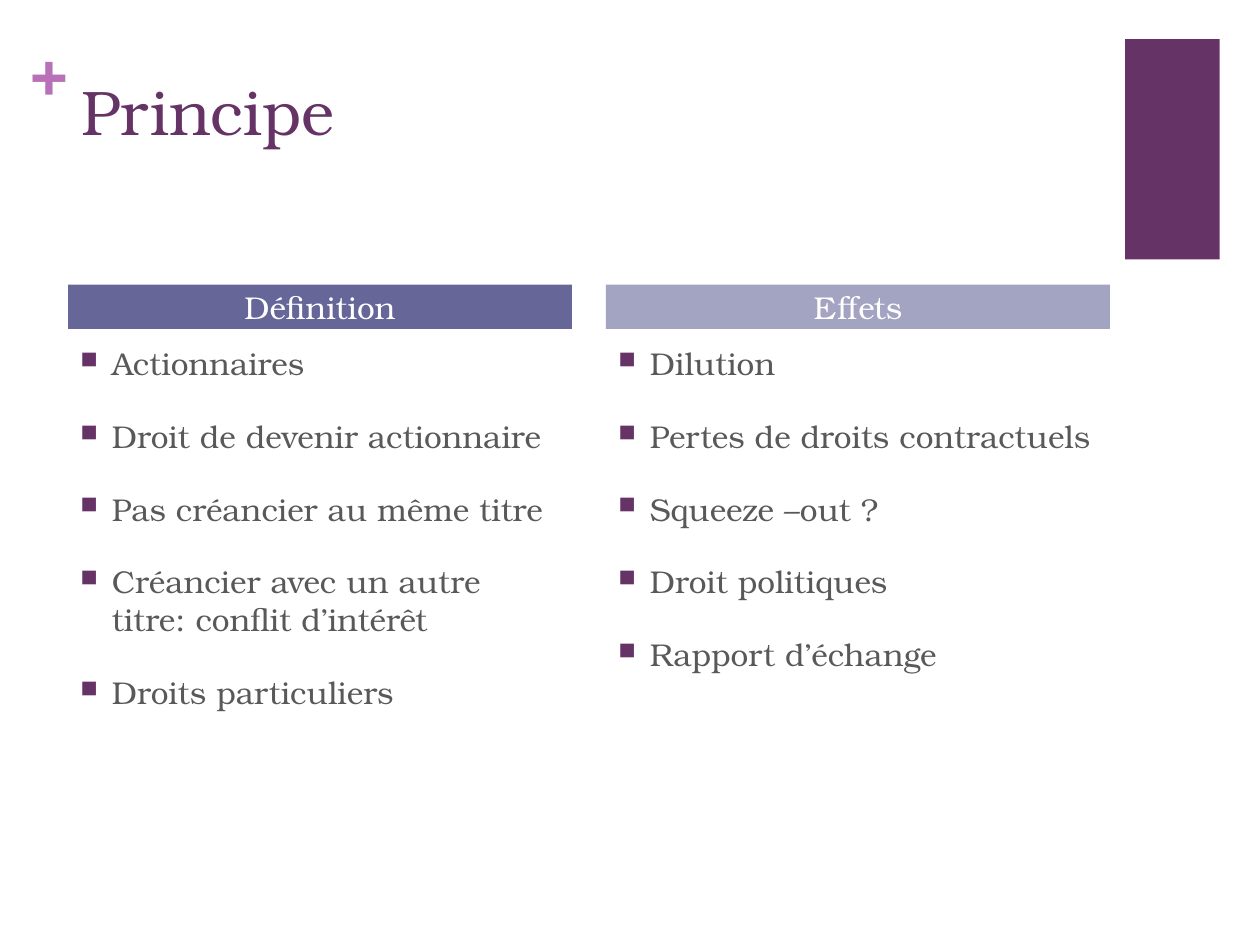
from dataclasses import dataclass

from lxml import etree
from pptx import Presentation
from pptx.dml.color import RGBColor
from pptx.enum.shapes import MSO_SHAPE
from pptx.enum.text import MSO_ANCHOR, PP_ALIGN
from pptx.oxml.ns import qn
from pptx.util import Inches, Pt

RECTANGLE = MSO_SHAPE.RECTANGLE
TOP, MIDDLE = MSO_ANCHOR.TOP, MSO_ANCHOR.MIDDLE
LEFT, CENTER = PP_ALIGN.LEFT, PP_ALIGN.CENTER


@dataclass(frozen=True)
class Theme:
    font: str = "TeX Gyre Bonum"
    plum: str = "663366"
    orchid: str = "B870B8"
    indigo: str = "666699"
    lavender: str = "A3A3C2"
    gray: str = "595959"
    white: str = "FFFFFF"
    title_size: int = 36
    body_size: int = 18
    gap: int = 20
    bullet_percent: int = 75


THEME = Theme()

COLUMNS = [
    ("Définition", THEME.indigo, [
        "Actionnaires",
        "Droit de devenir actionnaire",
        "Pas créancier au même titre",
        "Créancier avec un autre titre: conflit d’intérêt",
        "Droits particuliers",
    ]),
    ("Effets", THEME.lavender, [
        "Dilution",
        "Pertes de droits contractuels",
        "Squeeze –out ?",
        "Droit politiques",
        "Rapport d’échange",
    ]),
]


def apply_format(target, values):
    for name, value in values.items():
        setattr(target, name, value)


def add_block(slide, box, color):
    block = slide.shapes.add_shape(RECTANGLE, *map(Inches, box))
    block.shadow.inherit = False
    block.fill.solid()
    block.fill.fore_color.rgb = RGBColor.from_string(color)
    block.line.fill.background()
    return block


def add_text_area(slide, box):
    return slide.shapes.add_textbox(*map(Inches, box)).text_frame


def write_lines(frame, lines, size, color, bold=False, anchor=TOP, align=LEFT, gap=0, inset=None):
    apply_format(frame, {"word_wrap": True, "vertical_anchor": anchor})
    if inset is not None:
        side, edge = map(Inches, inset)
        apply_format(frame, {"margin_left": side, "margin_right": side,
                             "margin_top": edge, "margin_bottom": edge})
    for index, line in enumerate(lines):
        paragraph = frame.paragraphs[0] if index == 0 else frame.add_paragraph()
        apply_format(paragraph, {"alignment": align, "space_before": Pt(gap)})
        run = paragraph.add_run()
        run.text = line
        apply_format(run.font, {"name": THEME.font, "size": Pt(size), "bold": bold})
        run.font.color.rgb = RGBColor.from_string(color)


def add_bullet(paragraph, color):
    properties = paragraph._p.get_or_add_pPr()
    indent = Inches(0.25)
    properties.set("marL", str(indent))
    properties.set("indent", str(-indent))
    bullet_color = etree.SubElement(properties, qn("a:buClr"))
    etree.SubElement(bullet_color, qn("a:srgbClr"), val=color)
    etree.SubElement(properties, qn("a:buSzPct"), val=str(THEME.bullet_percent * 1000))
    etree.SubElement(properties, qn("a:buChar"), char="■")


def add_header(slide, left, top, width, height):
    block_width = 0.75
    add_block(slide, (left + width - block_width, top + 0.06, block_width, 1.75), THEME.plum)
    plus = add_text_area(slide, (left, top, 0.28, 0.61))
    write_lines(plus, ["+"], THEME.title_size, THEME.orchid, bold=True, inset=(0, 0))
    title = add_text_area(slide, (left + 0.31, top + 0.28, 8.26, 1.22))
    write_lines(title, ["Principe"], THEME.title_size, THEME.plum)


def add_column(slide, left, top, width, height, heading, color, points):
    heading_height, list_offset = 0.35, 0.42
    banner = add_block(slide, (left, top, width, heading_height), color)
    write_lines(banner.text_frame, [heading], THEME.body_size, THEME.white,
                anchor=MIDDLE, align=CENTER, gap=THEME.gap, inset=(0.1, 0))
    body = add_text_area(slide, (left, top + list_offset, width, height - list_offset))
    write_lines(body, points, THEME.body_size, THEME.gray, gap=THEME.gap)
    for paragraph in body.paragraphs:
        add_bullet(paragraph, THEME.plum)


def add_comparison(slide, left, top, width, height):
    gutter = 0.27
    column_width = (width - gutter * (len(COLUMNS) - 1)) / len(COLUMNS)
    for index, column in enumerate(COLUMNS):
        column_left = left + index * (column_width + gutter)
        add_column(slide, column_left, top, column_width, height, *column)


def main():
    presentation = Presentation()
    apply_format(presentation, {"slide_width": Inches(10), "slide_height": Inches(7.5)})
    slide = presentation.slides.add_slide(presentation.slide_layouts[6])
    add_header(slide, 0.24, 0.25, 9.44, 1.81)
    add_comparison(slide, 0.54, 2.26, 8.27, 4.44)
    presentation.save("out.pptx")


if __name__ == "__main__":
    main()
